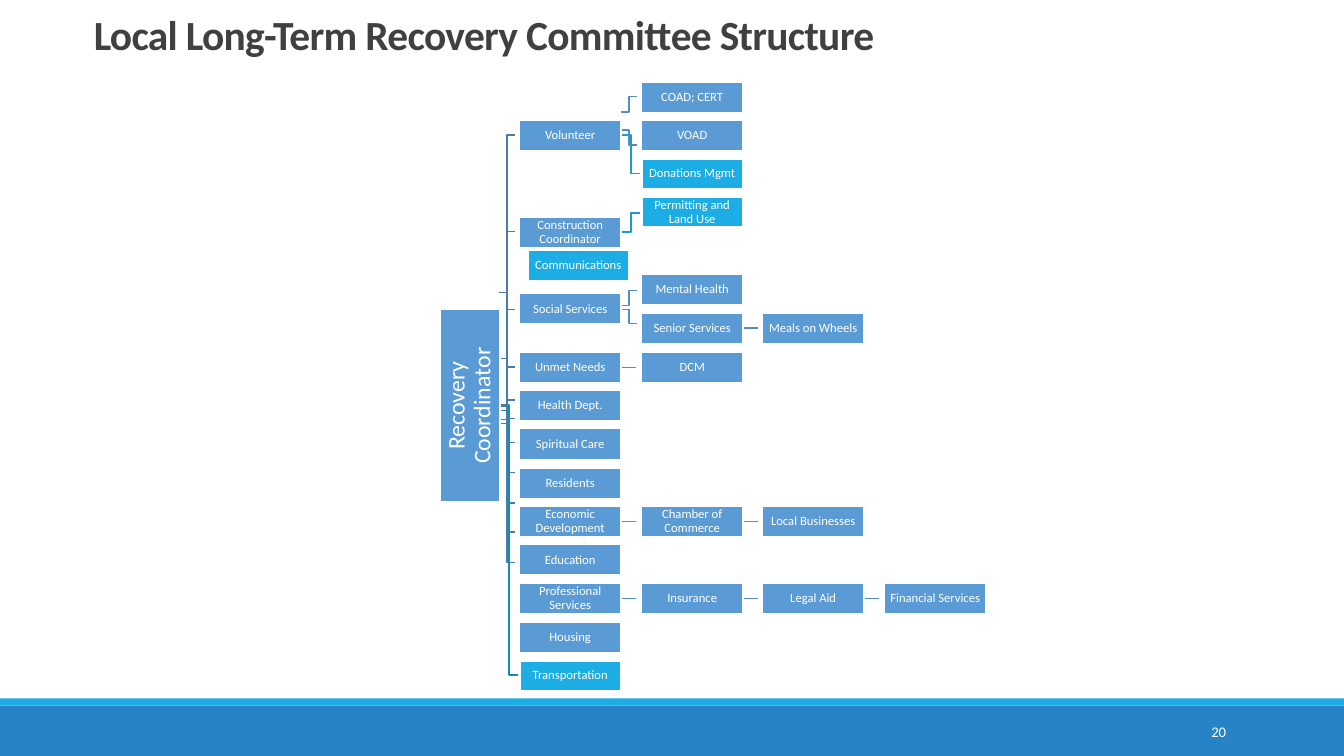
from lxml.etree import SubElement
from pptx import Presentation
from pptx.dml.color import RGBColor
from pptx.enum.shapes import MSO_CONNECTOR as Connector, MSO_SHAPE as Shape
from pptx.enum.text import MSO_ANCHOR as Anchor, MSO_AUTO_SIZE as AutoSize, PP_ALIGN as Align
from pptx.oxml.ns import qn
from pptx.util import Pt

PX = 9144
BOX_WIDTH, BOX_HEIGHT = 101, 31
BLUE, ACCENT, WHITE = "5B9BD5", "1CADE4", "FFFFFF"

ROWS = [
    (1, ["Volunteer"]),
    (3.5, ["Construction Coordinator"]),
    (5.5, ["Social Services"]),
    (0, [None, "COAD; CERT"]),
    (1, [None, "VOAD"]),
    (2, [None, "Donations Mgmt"]),
    (3, [None, "Permitting and Land Use"]),
    (5, [None, "Mental Health"]),
    (6, [None, "Senior Services", "Meals on Wheels"]),
    (7, ["Unmet Needs", "DCM"]),
    (8, ["Health Dept."]),
    (9, ["Spiritual Care"]),
    (10, ["Residents"]),
    (11, ["Economic Development", "Chamber of Commerce", "Local Businesses"]),
    (12, ["Education"]),
    (13, ["Professional Services", "Insurance", "Legal Aid", "Financial Services"]),
    (14, ["Housing"]),
    (15, ["Transportation"]),
]
ACCENTED = {"Donations Mgmt", "Permitting and Land Use", "Transportation"}

BRANCH_ELBOWS = [(111, 96), (129, 144), (303, 288), (307, 321)]
ACCENT_ELBOWS = [(134, 172), (230, 211)]
TRUNK_ELBOWS = [
    (290, 134), (356, 230), (403, 307), (416, 364), (420, 397), (407, 415),
    (402, 439), (402, 469), (402, 499), (402, 528), (402, 558),
]


def rgb(value):
    return RGBColor.from_string(value)


def px(length):
    return int(length * PX)


class OrganisationSlide:
    """Holds the style and the slide, and draws each kind of element."""

    font_name = "Calibri"

    def __init__(self, presentation):
        self.slide = presentation.slides.add_slide(presentation.slide_layouts[5])
        self.shapes = self.slide.shapes

    def add_text(self, shape, text, size, color=WHITE, align=Align.CENTER,
                 anchor=Anchor.MIDDLE, spacing=0.9, bold=False):
        frame = shape.text_frame
        frame.word_wrap = True
        frame.auto_size = AutoSize.NONE
        frame.vertical_anchor = anchor
        paragraph = frame.paragraphs[0]
        paragraph.alignment = align
        paragraph.line_spacing = spacing
        run = paragraph.add_run()
        run.text = text
        run.font.name = self.font_name
        run.font.size = Pt(size)
        run.font.bold = bold
        run.font.color.rgb = rgb(color)
        return run

    def title(self, text, left, top, width, height):
        title = self.shapes.title
        title.left, title.top = px(left), px(top)
        title.width, title.height = px(width), px(height)
        run = self.add_text(title, text, 29.6, "404040", Align.LEFT, Anchor.BOTTOM, 0.75, True)
        run.font._element.set("spc", "-50")

    def label(self, text, left, top, width, height):
        label = self.shapes.add_textbox(px(left), px(top), px(width), px(height))
        self.add_text(label, text, 10.5, align=Align.RIGHT, spacing=1.0)

    def rectangle(self, left, top, width, height, fill):
        rectangle = self.shapes.add_shape(
            Shape.RECTANGLE, px(left), px(top), px(width), px(height))
        rectangle.shadow.inherit = False
        rectangle.fill.solid()
        rectangle.fill.fore_color.rgb = rgb(fill)
        rectangle.line.fill.background()
        return rectangle

    def box(self, text, left, top, width=BOX_WIDTH, height=BOX_HEIGHT, accent=False, size=9):
        box = self.rectangle(left, top, width, height, ACCENT if accent else BLUE)
        box.line.color.rgb = rgb(WHITE)
        box.line.width = Pt(2 if accent else 1.5)
        frame = box.text_frame
        frame.margin_left = frame.margin_right = px(1)
        frame.margin_top = frame.margin_bottom = px(1)
        self.add_text(box, text, size)
        return box

    def stroke(self, shape, color, width):
        shape.line.color.rgb = rgb(color)
        shape.line.width = Pt(width)
        self.shapes._spTree.insert(2, shape._element)

    def elbow(self, left, start, end, width, color, weight=1):
        middle, right = left + width // 2, left + width
        builder = self.shapes.build_freeform(left, start, scale=PX)
        builder.add_line_segments([(middle, start), (middle, end), (right, end)], close=False)
        elbow = builder.convert_to_shape()
        elbow.shadow.inherit = False
        elbow.fill.background()
        self.stroke(elbow, color, weight)

    def stub(self, box, length):
        right, middle = box.left + box.width, box.top + box.height // 2
        stub = self.shapes.add_connector(
            Connector.STRAIGHT, right, middle, right + px(length), middle)
        stub.begin_connect(box, 3)
        self.stroke(stub, "538DC1", 1)
        SubElement(stub._element.spPr, qn("a:effectLst"))


def main():
    presentation = Presentation()
    presentation.slide_width, presentation.slide_height = px(1333), px(750)
    chart = OrganisationSlide(presentation)

    chart.title("Local Long-Term Recovery Committee Structure", 83, 15, 1100, 48)
    chart.rectangle(0, 700, 1333, 50, "2683C6")
    chart.rectangle(0, 693, 1333, 7, ACCENT)
    chart.label("20", 1083, 706, 143, 40)

    coordinator = chart.box("Recovery Coordinator", 370, 373, 192, 59, size=17)
    coordinator.rotation = 270
    chart.box("Communications", 523, 248, accent=True)
    for row, names in ROWS:
        top = 81 + int(row * 38.3)
        for column, name in enumerate(names):
            if name:
                left = 515 + (241 * column + 1) // 2
                box = chart.box(name, left, top, accent=name in ACCENTED)
                if column + 1 < len(names):
                    chart.stub(box, 15)

    for start, end in BRANCH_ELBOWS:
        chart.elbow(616, start, end, 16, "538DC1")
    for start, end in ACCENT_ELBOWS:
        chart.elbow(616, start, end, 20, "199DCF", 1.25)
    for start, end in TRUNK_ELBOWS:
        chart.elbow(495, start, end, 16, "497CAB")
    chart.elbow(495, 402, 670, 20, "168BB7", 1.25)

    presentation.save("out.pptx")


if __name__ == "__main__":
    main()
